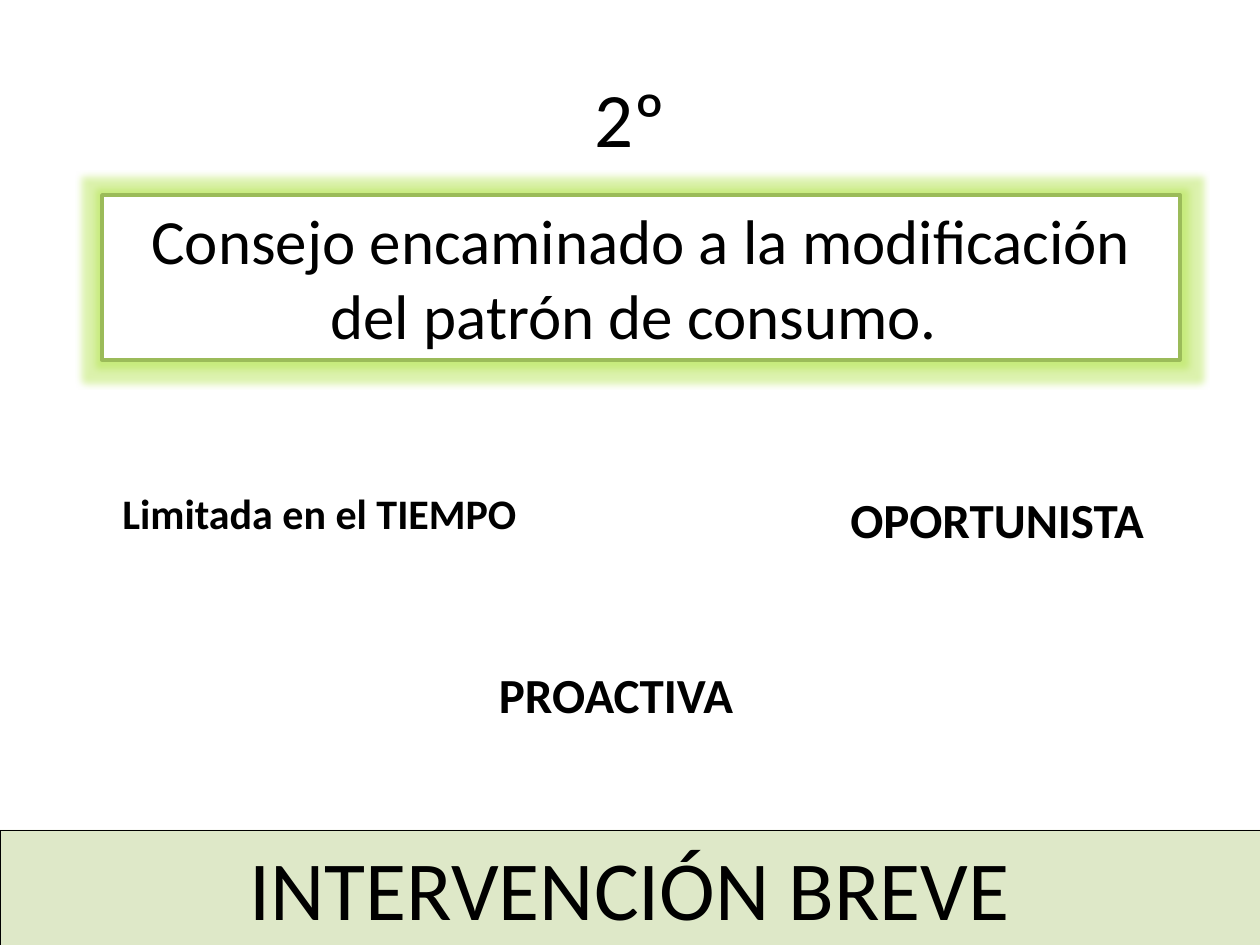
"""Build the slide on brief intervention as the second step."""
import pptx
import pptx.dml.color
import pptx.enum.shapes
import pptx.enum.text
import pptx.oxml
import pptx.util

PX = 914400 // 126
NS = 'xmlns:a="http://schemas.openxmlformats.org/drawingml/2006/main"'
BLACK, WHITE, GREEN = "000000", "FFFFFF", "9BBB59"


def rgb(color):
    return pptx.dml.color.RGBColor.from_string(color)


def write(shape, text, size, bold=False, anchor="TOP"):
    frame = shape.text_frame
    frame.word_wrap = True
    frame.vertical_anchor = pptx.enum.text.MSO_ANCHOR[anchor]
    paragraph = frame.paragraphs[0]
    paragraph.alignment = pptx.enum.text.PP_ALIGN.CENTER
    run = paragraph.add_run()
    run.text = text
    run.font.name = "Calibri"
    run.font.size = pptx.util.Pt(size)
    run.font.bold = bold
    run.font.color.rgb = rgb(BLACK)


deck = pptx.Presentation()
deck.slide_width = pptx.util.Inches(10)
deck.slide_height = pptx.util.Inches(7.5)
slide = deck.slides.add_slide(deck.slide_layouts[6])

step = slide.shapes.add_textbox(63 * PX, 38 * PX, 1134 * PX, 157 * PX)
write(step, "2º", size=44, anchor="MIDDLE")

panels = []
for text, size, box, fill, line, width in [
    ("INTERVENCIÓN BREVE", 48, (0, 830, 1260, 115), GREEN, BLACK, 0.25),
    ("Consejo encaminado a la modificación del patrón de consumo. ", 36,
     (102, 195, 1078, 165), WHITE, GREEN, 2),
]:
    panel = slide.shapes.add_shape(
        pptx.enum.shapes.MSO_SHAPE.RECTANGLE, *[length * PX for length in box])
    panel.shadow.inherit = False
    panel.fill.solid()
    panel.fill.fore_color.rgb = rgb(fill)
    panel.line.color.rgb = rgb(line)
    panel.line.width = pptx.util.Pt(width)
    write(panel, text, size=size)
    panels.append(panel)

banner, advice = panels
banner_color = banner.element.spPr.find(".//{*}solidFill/{*}srgbClr")
banner_color.append(pptx.oxml.parse_xml(f'<a:alpha {NS} val="33000"/>'))
advice.element.spPr.find("{*}effectLst").append(pptx.oxml.parse_xml(
    f'<a:glow {NS} rad="101600"><a:srgbClr val="{GREEN}">'
    '<a:satMod val="175000"/><a:alpha val="40000"/></a:srgbClr></a:glow>'))

for text, size, box in [
    ("Limitada en el TIEMPO", 24, (102, 481, 435, 63)),
    ("PROACTIVA", 28, (437, 658, 358, 72)),
    ("OPORTUNISTA", 28, (818, 483, 358, 72)),
]:
    trait = slide.shapes.add_textbox(*[length * PX for length in box])
    write(trait, text, size=size, bold=True)

deck.save("out.pptx")
